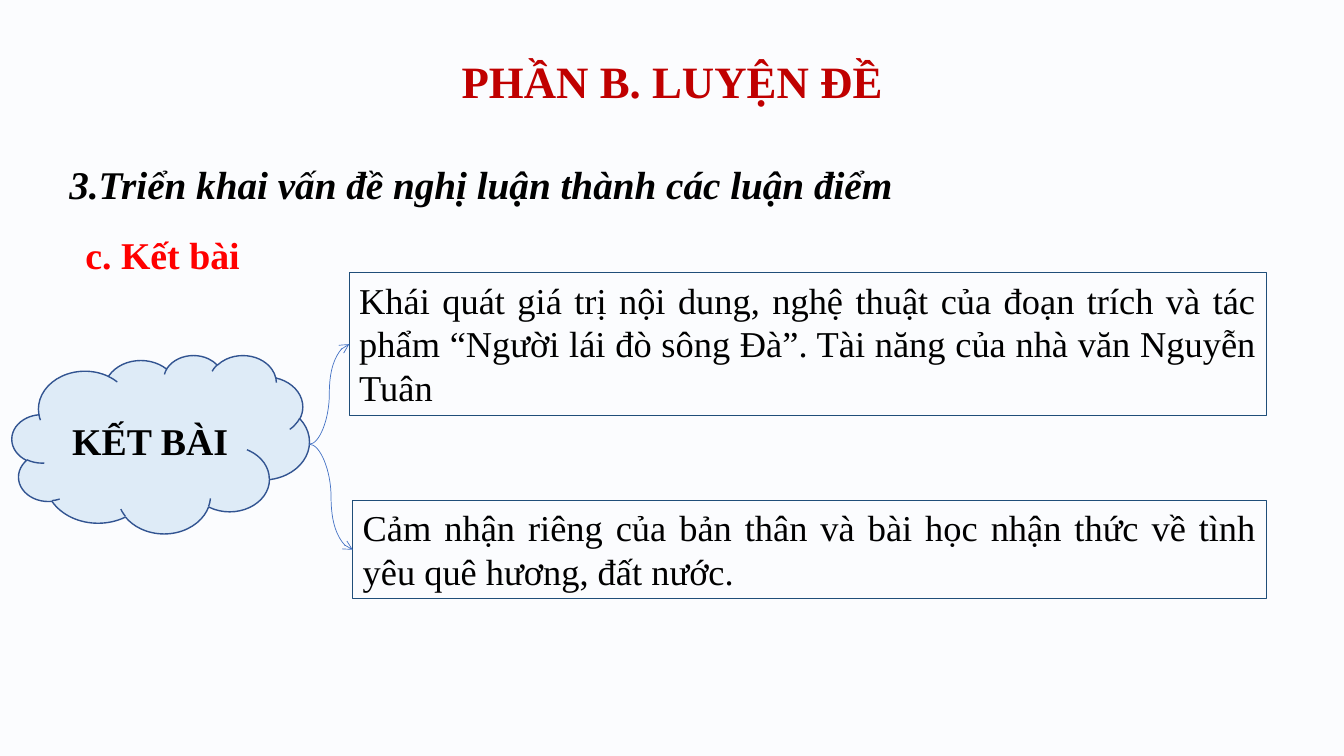
from dataclasses import dataclass

from lxml import etree
from pptx import Presentation
from pptx.dml.color import RGBColor
from pptx.enum.shapes import MSO_CONNECTOR, MSO_SHAPE
from pptx.enum.text import MSO_ANCHOR, MSO_AUTO_SIZE, PP_ALIGN
from pptx.oxml.ns import qn
from pptx.util import Pt

CURVE = MSO_CONNECTOR.CURVE
CLOUD, RECTANGLE = MSO_SHAPE.CLOUD, MSO_SHAPE.RECTANGLE
TOP, MIDDLE = MSO_ANCHOR.TOP, MSO_ANCHOR.MIDDLE
CENTER, JUSTIFY = PP_ALIGN.CENTER, PP_ALIGN.JUSTIFY
NO_FIT = MSO_AUTO_SIZE.NONE

# Content: text with its left, top, width and height in points
TITLE = ("PHẦN B. LUYỆN ĐỀ", (66.2, 28.8, 828, 62))
HEADING = ("3.Triển khai vấn đề nghị luận thành các luận điểm", (42.5, 94.3, 862.5, 51.8))
SUBHEADING = ("c. Kết bài ", (53.3, 162, 132.5, 40.3))
TOPIC = ("KẾT BÀI", (8.6, 253.6, 212.4, 127.4))
POINTS = [
    ("Khái quát giá trị nội dung, nghệ thuật của đoạn trích và tác phẩm "
     "“Người lái đò sông Đà”. Tài năng của nhà văn Nguyễn Tuân", (249.5, 195, 655.5, 101.7)),
    ("Cảm nhận riêng của bản thân và bài học nhận thức về tình yêu quê hương, "
     "đất nước.", (252, 357.5, 653, 70.3)),
]


@dataclass(frozen=True)
class Theme:
    font: str = "Times New Roman"
    background: str = "FBFCFE"
    title: str = "C00000"
    accent: str = "FF0000"
    text: str = "000000"
    cloud_fill: str = "DEEBF7"
    cloud_line: str = "325491"
    box_line: str = "1F4E79"
    arrow: str = "4472C4"
    title_size: int = 32
    heading_size: int = 28
    label_size: int = 27
    body_size: int = 26


THEME = Theme()


def color(value):
    return RGBColor.from_string(value)


def place(shape, frame):
    shape.left, shape.top, shape.width, shape.height = map(Pt, frame)


def write(shape, text, *, size, ink=THEME.text, bold=False, italic=False,
          align=JUSTIFY, anchor=TOP, spacing=1.0, wrap=True):
    box = shape.text_frame
    box.word_wrap = wrap
    box.auto_size = NO_FIT
    box.vertical_anchor = anchor
    para = box.paragraphs[0]
    para.alignment = align
    para.line_spacing = spacing
    span = para.add_run()
    span.text = text
    span.font.name = THEME.font
    span.font.size = Pt(size)
    span.font.bold = bold
    span.font.italic = italic
    span.font.color.rgb = color(ink)


def add_outlined(page, kind, frame, line, weight, fill=None):
    shape = page.shapes.add_shape(kind, *map(Pt, frame))
    shape.shadow.inherit = False
    if fill:
        shape.fill.solid()
        shape.fill.fore_color.rgb = color(fill)
    else:
        shape.fill.background()
    shape.line.color.rgb = color(line)
    shape.line.width = Pt(weight)
    return shape


def add_arrow(page, start, end):
    arrow = page.shapes.add_connector(CURVE, *map(Pt, start + end))
    arrow.line.color.rgb = color(THEME.arrow)
    arrow.line.width = Pt(0.5)
    properties = arrow.element.spPr
    etree.SubElement(properties.find(qn("a:ln")), qn("a:tailEnd"), type="arrow")
    etree.SubElement(properties, qn("a:effectLst"))


def main():
    deck = Presentation()
    deck.slide_width, deck.slide_height = Pt(960), Pt(540)
    page = deck.slides.add_slide(deck.slide_layouts[5])
    page.background.fill.solid()
    page.background.fill.fore_color.rgb = color(THEME.background)

    # Title and headings
    text, frame = TITLE
    place(page.shapes.title, frame)
    write(page.shapes.title, text, size=THEME.title_size, ink=THEME.title, bold=True,
          align=CENTER, anchor=MIDDLE, spacing=0.9)
    text, frame = HEADING
    write(page.shapes.add_textbox(*map(Pt, frame)), text, size=THEME.heading_size,
          bold=True, italic=True, spacing=1.5)
    text, frame = SUBHEADING
    write(page.shapes.add_textbox(*map(Pt, frame)), text, size=THEME.label_size,
          ink=THEME.accent, bold=True, align=CENTER, wrap=False)

    # Topic cloud
    text, frame = TOPIC
    cloud = add_outlined(page, CLOUD, frame, THEME.cloud_line, 1, THEME.cloud_fill)
    write(cloud, text, size=THEME.label_size, bold=True, align=CENTER, anchor=MIDDLE)
    left, top, width, height = frame
    start = (left + width, top + height / 2)

    # Points, each with an arrow from the cloud to the middle of its left side
    for text, frame in POINTS:
        point = add_outlined(page, RECTANGLE, frame, THEME.box_line, 0.75)
        write(point, text, size=THEME.body_size)
        left, top, width, height = frame
        add_arrow(page, start, (left, top + height / 2))

    deck.save("out.pptx")


if __name__ == "__main__":
    main()
